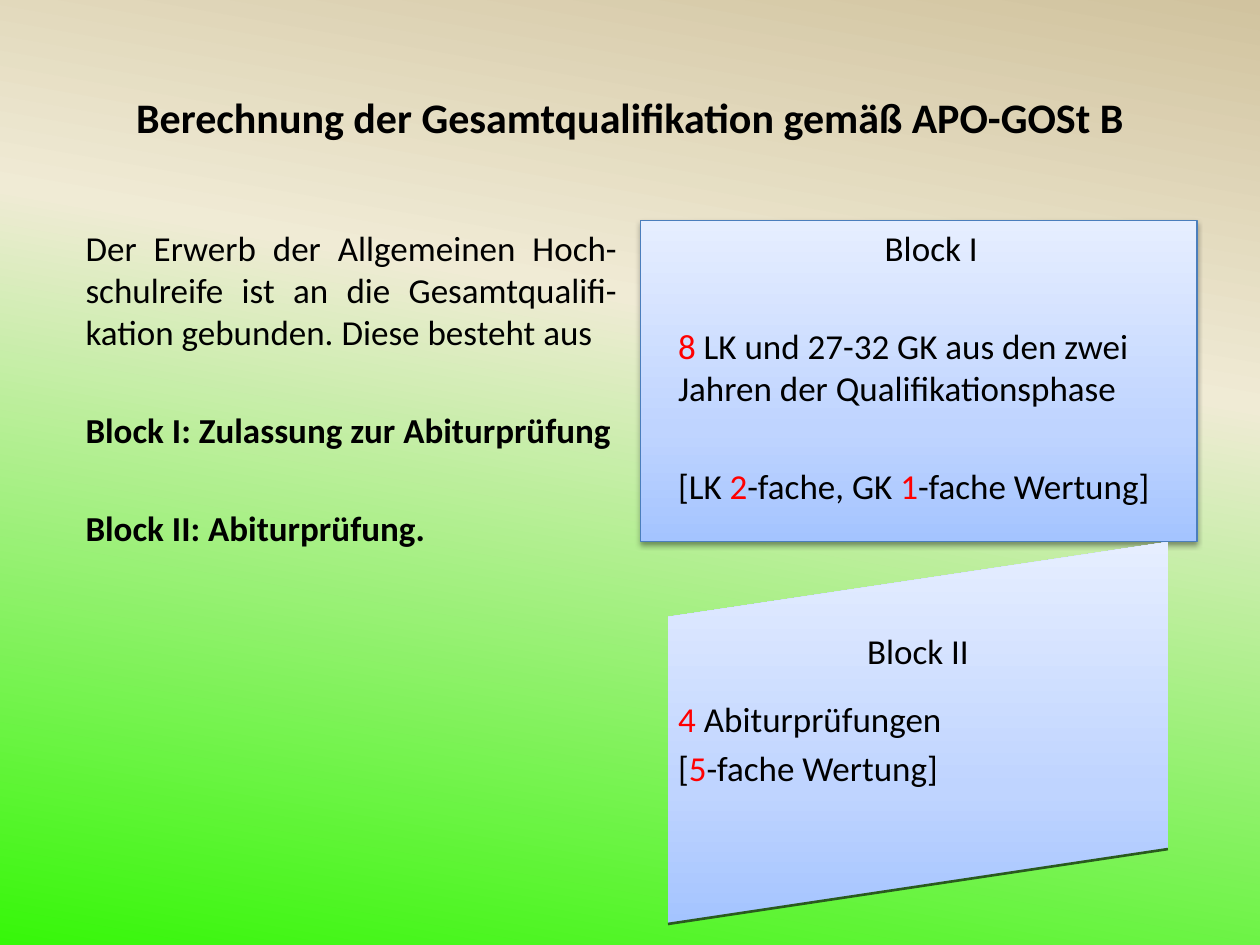
import copy
from dataclasses import dataclass

import lxml.etree
import pptx
import pptx.dml.color
import pptx.enum.shapes
import pptx.enum.text
import pptx.oxml.ns
import pptx.util

Pt = pptx.util.Pt
RGB = pptx.dml.color.RGBColor
ALIGN = pptx.enum.text.PP_ALIGN
ANCHOR = pptx.enum.text.MSO_ANCHOR
qn = pptx.oxml.ns.qn

BLACK = RGB(0x00, 0x00, 0x00)
RED = RGB(0xFF, 0x00, 0x00)
BORDER = RGB(0x4B, 0x7E, 0xBC)
EDGE = RGB(0x2A, 0x5A, 0x1E)
BACKGROUND = ((0, RGB(0x36, 0xF7, 0x09)), (0.65, RGB(0xF0, 0xEB, 0xD5)),
              (1, RGB(0xD1, 0xC3, 0x9F)))
PANEL = ((0, RGB(0xA4, 0xC4, 0xFF)), (0.35, RGB(0xBF, 0xD4, 0xFF)),
         (1, RGB(0xE6, 0xEE, 0xFF)))
FONT = "Calibri"


@dataclass(frozen=True)
class Span:
    text: str
    color: RGB = BLACK


@dataclass(frozen=True)
class Para:
    spans: tuple[Span, ...]
    align: ALIGN = ALIGN.LEFT
    before: float = 4
    indent: float = 0
    size: float = 20
    bold: bool = False


def para(*parts: str, **fmt) -> Para:
    spans = tuple(Span(s, RED if s.isdigit() else BLACK) for s in parts)
    return Para(spans, **fmt)


TITLE = (para("Berechnung der Gesamtqualifikation gemäß APO-GOSt B",
              align=ALIGN.CENTER, before=0, size=24, bold=True),)
INTRO = (
    para("Der Erwerb der Allgemeinen Hoch-schulreife ist an die "
         "Gesamtqualifi-kation gebunden. Diese besteht aus",
         align=ALIGN.JUSTIFY),
    para("Block I: Zulassung zur Abiturprüfung", before=32, bold=True),
    para("Block II: Abiturprüfung.", before=32, bold=True),
)
BLOCK_1 = (
    para("Block I", align=ALIGN.CENTER, indent=14.4),
    para("8", " LK und 27-32 GK aus den zwei Jahren der Qualifikationsphase",
         before=32, indent=14.4),
    para("[LK ", "2", "-fache, GK ", "1", "-fache Wertung]",
         before=32, indent=14.4),
)
BLOCK_2 = (
    para("Block II", align=ALIGN.CENTER),
    para("4", " Abiturprüfungen", before=15),
    para("[", "5", "-fache Wertung]"),
)


def write(sp, paras: tuple[Para, ...], *, anchor: ANCHOR = ANCHOR.TOP,
          side: float = 7.2, top: float = 3.6) -> None:
    tf = sp.text_frame
    tf.word_wrap = True
    tf.vertical_anchor = anchor
    tf.margin_left = tf.margin_right = Pt(side)
    tf.margin_top, tf.margin_bottom = Pt(top), Pt(3.6)
    for i, item in enumerate(paras):
        p = tf.add_paragraph() if i else tf.paragraphs[0]
        p.alignment = item.align
        p.space_before = Pt(item.before if i else 0)
        p._p.get_or_add_pPr().set("marL", str(Pt(item.indent)))
        for span in item.spans:
            r = p.add_run()
            r.text = span.text
            r.font.name = FONT
            r.font.size = Pt(item.size)
            r.font.bold = item.bold
            r.font.color.rgb = span.color


def gradient(fill, root, stops: tuple, angle: float) -> None:
    fill.gradient()
    fill.gradient_angle = 360 - angle
    gs_list = root.find(".//" + qn("a:gsLst"))
    gs_list.insert(1, copy.deepcopy(gs_list[0]))
    for gs, (position, color) in zip(fill.gradient_stops, stops):
        gs.position = position
        gs.color.rgb = color


def drop_shadow(sp) -> None:
    sp.shadow.inherit = False
    effects = sp._element.spPr.find(qn("a:effectLst"))
    outer = lxml.etree.SubElement(
        effects, qn("a:outerShdw"), blurRad=str(Pt(3.1)),
        dist=str(Pt(1.6)), dir="5400000", rotWithShape="0")
    color = lxml.etree.SubElement(outer, qn("a:srgbClr"), val="000000")
    lxml.etree.SubElement(color, qn("a:alpha"), val="38000")


def text_box(s, box: tuple, paras: tuple[Para, ...], **fmt) -> None:
    write(s.shapes.add_textbox(*map(Pt, box)), paras, **fmt)


def panel(s, box: tuple, paras: tuple[Para, ...]) -> None:
    rect = pptx.enum.shapes.MSO_SHAPE.RECTANGLE
    sp = s.shapes.add_shape(rect, *map(Pt, box))
    gradient(sp.fill, sp._element.spPr, PANEL, 270)
    sp.line.color.rgb = BORDER
    sp.line.width = Pt(0.75)
    drop_shadow(sp)
    write(sp, paras)


def slanted_panel(s, box: tuple, rise: float, paras: tuple[Para, ...]) -> None:
    x, y, w, h = box
    left_low, right_low = (x, y + h), (x + w, y + h - rise)
    corners = ((x + w, y), right_low, left_low)
    builder = s.shapes.build_freeform(Pt(x), Pt(y + rise))
    builder.add_line_segments([tuple(map(Pt, c)) for c in corners], close=True)
    sp = builder.convert_to_shape()
    gradient(sp.fill, sp._element.spPr, PANEL, 270)
    sp.line.fill.background()
    sp.shadow.inherit = False
    write(sp, paras, side=5.8, top=50)
    edge = s.shapes.add_connector(pptx.enum.shapes.MSO_CONNECTOR.STRAIGHT,
                                  *map(Pt, left_low + right_low))
    edge.line.color.rgb = EDGE
    edge.line.width = Pt(1.5)
    lxml.etree.SubElement(edge._element.spPr, qn("a:effectLst"))


def main() -> None:
    prs = pptx.Presentation()
    prs.slide_width, prs.slide_height = Pt(720), Pt(540)
    s = prs.slides.add_slide(prs.slide_layouts[6])
    gradient(s.background.fill, s._element, BACKGROUND, 280)
    panel(s, (366, 126, 318, 183.6), BLOCK_1)
    text_box(s, (36, 21.6, 648, 90), TITLE, anchor=ANCHOR.MIDDLE)
    text_box(s, (41.8, 126, 318, 356.4), INTRO)
    slanted_panel(s, (381.7, 309.7, 285.7, 218.3), 42.8, BLOCK_2)
    prs.save("out.pptx")


if __name__ == "__main__":
    main()
